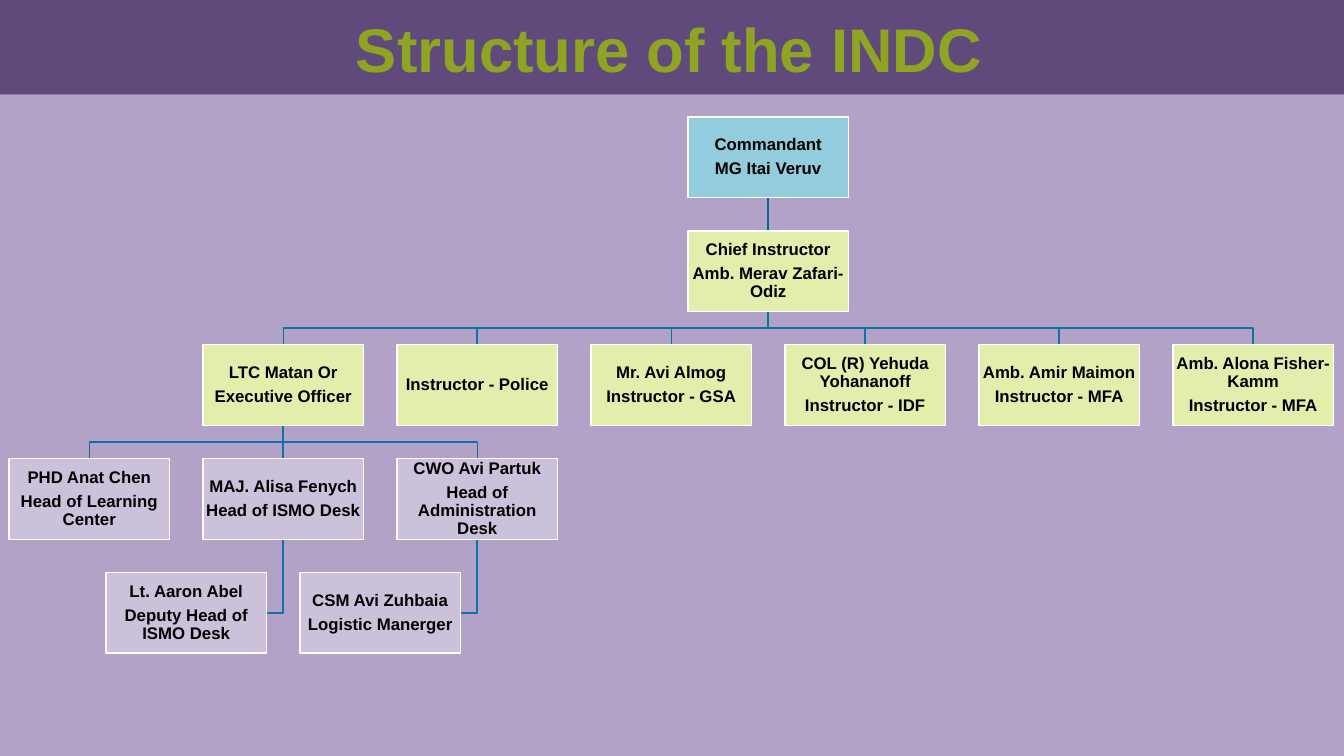
from lxml import etree
from pptx import Presentation
from pptx.dml.color import RGBColor
from pptx.enum.shapes import MSO_CONNECTOR, MSO_SHAPE
from pptx.enum.text import MSO_ANCHOR, MSO_AUTO_SIZE, PP_ALIGN
from pptx.oxml import parse_xml
from pptx.oxml.ns import nsdecls, qn
from pptx.util import Inches, Pt

RECT, LINE = MSO_SHAPE.RECTANGLE, MSO_CONNECTOR.STRAIGHT
TOP, MIDDLE = MSO_ANCHOR.TOP, MSO_ANCHOR.MIDDLE
CENTER, NO_FIT = PP_ALIGN.CENTER, MSO_AUTO_SIZE.NONE

WIDE, HIGH, BAND = 13.33, 7.5, 0.94
LEFT, HEAD = 0.09, 1.16
COL, ROW = 1.924, 1.13
BOX_W, BOX_H = 1.59, 0.8
COLORS = {
    "page": "B3A2C7", "band": "604A7B", "title": "8EA422",
    "blue": "93CDDD", "green": "E3EEAD", "lilac": "CCC1DA",
    "link": "0D73A6", "trunk": "0B6693", "white": "FFFFFF", "black": "000000",
}
BOXES = [
    (3.5, 0, "blue", ["Commandant", "MG Itai Veruv"]),
    (3.5, 1, "green", ["Chief Instructor", "Amb. Merav Zafari-Odiz"]),
    (1, 2, "green", ["LTC Matan Or", "Executive Officer"]),
    (2, 2, "green", ["Instructor - Police"]),
    (3, 2, "green", ["Mr. Avi Almog", "Instructor - GSA"]),
    (4, 2, "green", ["COL (R) Yehuda Yohananoff", "Instructor - IDF"]),
    (5, 2, "green", ["Amb. Amir Maimon", "Instructor - MFA"]),
    (6, 2, "green", ["Amb. Alona Fisher-Kamm", "Instructor - MFA"]),
    (0, 3, "lilac", ["PHD Anat Chen", "Head of Learning Center"]),
    (1, 3, "lilac", ["MAJ. Alisa Fenych", "Head of ISMO Desk"]),
    (2, 3, "lilac", ["CWO Avi Partuk", "Head of Administration Desk"]),
    (0.5, 4, "lilac", ["Lt. Aaron Abel", "Deputy Head of ISMO Desk"]),
    (1.5, 4, "lilac", ["CSM Avi Zuhbaia", "Logistic Manerger"]),
]


def color(name):
    """Return the named colour."""
    return RGBColor.from_string(COLORS[name])


def place(col, row):
    """Return the left and top of a grid cell in inches."""
    return LEFT + col * COL, HEAD + row * ROW


def style(para, size, name, after):
    """Format a centred bold paragraph."""
    para.alignment, para.line_spacing = CENTER, 0.9
    para.space_before, para.space_after = Pt(0), Pt(after)
    font = para.font
    font.name, font.size, font.bold = "Arial", Pt(size), True
    font.color.rgb = color(name)


def add_rect(slide, left, top, width, height, fill):
    """Add a plain filled rectangle."""
    rect = slide.shapes.add_shape(RECT, *map(Inches, (left, top, width, height)))
    rect.shadow.inherit = False
    rect.fill.solid()
    rect.fill.fore_color.rgb = color(fill)
    rect.line.fill.background()
    return rect


def add_title(slide, text):
    """Place the title in front of the band."""
    title = slide.shapes.title
    title.left, title.top, title.width, title.height = map(
        Inches, (1.37, 0.14, 10.54, 1.02))
    frame = title.text_frame
    frame.text = text
    frame.word_wrap, frame.auto_size = True, NO_FIT
    frame.vertical_anchor = TOP
    style(frame.paragraphs[0], 44, "title", 6)
    edge = parse_xml(f'<a:ln {nsdecls("a")} w="9525"><a:solidFill>'
                     f'<a:srgbClr val="{COLORS["white"]}"/></a:solidFill></a:ln>')
    next(title.element.iter(qn("a:r"))).get_or_add_rPr().append(edge)
    title.element.getparent().append(title.element)


def add_box(slide, col, row, fill, lines):
    """Add one post of the chart with its text."""
    box = add_rect(slide, *place(col, row), BOX_W, BOX_H, fill)
    box.line.color.rgb, box.line.width = color("white"), Pt(1)
    frame = box.text_frame
    frame.word_wrap, frame.vertical_anchor = True, MIDDLE
    frame.margin_left = frame.margin_right = Inches(0.01)
    frame.margin_top = frame.margin_bottom = Inches(0.01)
    frame.text = "\n".join(lines)
    for para in frame.paragraphs:
        style(para, 12, "black", 4.2)
    for props in box.element.iter(qn("a:pPr")):
        props.set("rtl", "1")


def add_path(slide, points, name="link"):
    """Draw a straight or bent link through the points."""
    spots = [(Inches(x), Inches(y)) for x, y in points]
    if len(spots) == 2:
        link = slide.shapes.add_connector(LINE, *spots[0], *spots[1])
        etree.SubElement(link.element.spPr, qn("a:effectLst"))
    else:
        form = slide.shapes.build_freeform(*spots[0])
        form.add_line_segments(spots[1:], close=False)
        link = form.convert_to_shape()
        link.shadow.inherit = False
        link.fill.background()
    link.line.color.rgb, link.line.width = color(name), Pt(1)


def link_down(slide, start, end, row, name="link"):
    """Link a post to one in the next row."""
    left, top = place(start, row)
    x, y = left + BOX_W / 2, top + BOX_H
    goal, gap = x + (end - start) * COL, ROW - BOX_H
    bend = [(x, y + gap / 2), (goal, y + gap / 2)] if end != start else []
    add_path(slide, [(x, y), *bend, (goal, y + gap)], name)


def link_side(slide, col, row):
    """Link a post to the right edge of its aide half a column left."""
    left, top = place(col, row)
    x, y = left + BOX_W / 2, top + ROW + BOX_H / 2
    edge = left - COL / 2 + BOX_W
    add_path(slide, [(x, top + BOX_H), (x, y), (edge, y)])


def main():
    """Build and save the slide."""
    deck = Presentation()
    deck.slide_width, deck.slide_height = Inches(WIDE), Inches(HIGH)
    slide = deck.slides.add_slide(deck.slide_layouts[5])
    add_rect(slide, 0, BAND, WIDE, HIGH - BAND, "page")
    add_rect(slide, 0, 0, WIDE, BAND, "band")
    add_title(slide, "Structure of the INDC")
    link_down(slide, 3.5, 3.5, 0, "trunk")
    for col in range(1, 7):
        link_down(slide, 3.5, col, 1)
    for col in range(3):
        link_down(slide, 1, col, 2)
    for col in (1, 2):
        link_side(slide, col, 3)
    for post in BOXES:
        add_box(slide, *post)
    deck.save("out.pptx")


main()
